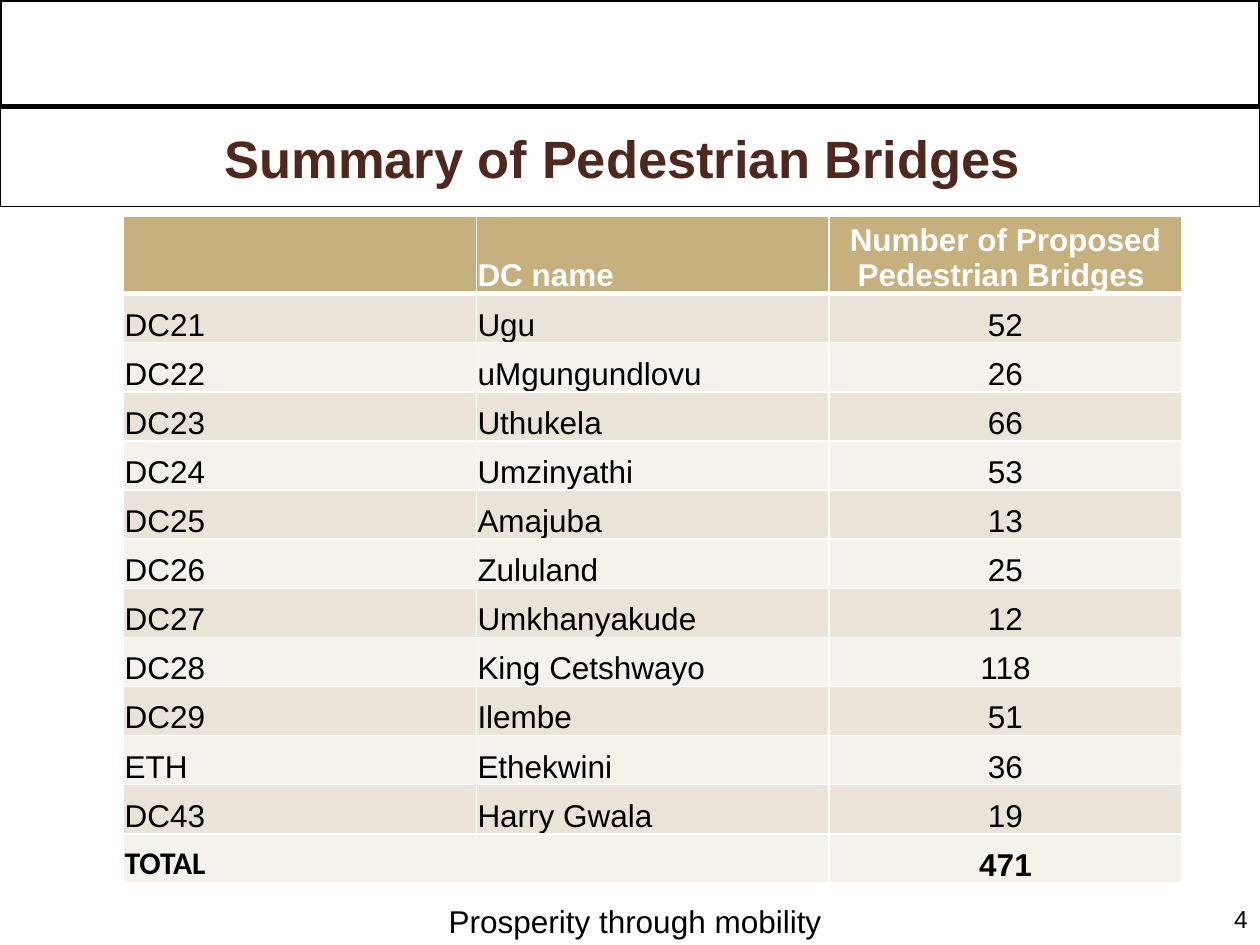
from pptx import Presentation
from pptx.dml.color import RGBColor
from pptx.enum.shapes import MSO_SHAPE
from pptx.enum.text import MSO_ANCHOR, PP_ALIGN
from pptx.oxml.ns import qn
from pptx.util import Inches, Pt
from lxml.etree import SubElement

BLACK, WHITE, BROWN = "000000", "FFFFFF", "4F271C"
HEADER_FILL, BAND_FILLS = "C5B07E", ("EAE4D8", "F5F2EC")

HEADINGS = ("", "DC name", "Number of Proposed Pedestrian Bridges ")
DISTRICTS = (
    ("DC21", "Ugu", 52),
    ("DC22", "uMgungundlovu", 26),
    ("DC23", "Uthukela", 66),
    ("DC24", "Umzinyathi", 53),
    ("DC25", "Amajuba", 13),
    ("DC26", "Zululand", 25),
    ("DC27", "Umkhanyakude", 12),
    ("DC28", "King Cetshwayo", 118),
    ("DC29", "Ilembe", 51),
    ("ETH", "Ethekwini", 36),
    ("DC43", "Harry Gwala", 19),
)


def rgb(color):
    return RGBColor.from_string(color)


def write(frame, text, size, color=BLACK, bold=False, align=PP_ALIGN.LEFT, font="Arial"):
    paragraph = frame.paragraphs[0]
    paragraph.text = text
    paragraph.alignment = align
    paragraph.font.name = font
    paragraph.font.size = Pt(size)
    paragraph.font.bold = bold
    paragraph.font.color.rgb = rgb(color)


def add_band(slide, top, height, line_width):
    """Add an outlined, unfilled band across the whole slide."""
    band = slide.shapes.add_shape(
        MSO_SHAPE.RECTANGLE, 0, Inches(top), Inches(10), Inches(height))
    band.shadow.inherit = False
    band.fill.background()
    band.line.color.rgb = rgb(BLACK)
    band.line.width = Pt(line_width)
    return band


def add_label(slide, left, top, width, height, text, size, align, anchor):
    label = slide.shapes.add_textbox(
        Inches(left), Inches(top), Inches(width), Inches(height))
    label.text_frame.word_wrap = True
    label.text_frame.vertical_anchor = anchor
    write(label.text_frame, text, size, align=align)


def add_border(cell, side, width):
    border = SubElement(cell._tc.get_or_add_tcPr(), qn(f"a:ln{side}"), w=str(Pt(width)))
    fill = SubElement(border, qn("a:solidFill"))
    SubElement(fill, qn("a:srgbClr"), val=WHITE)


def style_cell(cell, fill, top=1, bottom=1):
    cell.vertical_anchor = MSO_ANCHOR.BOTTOM
    cell.margin_left = cell.margin_right = cell.margin_top = Inches(0.01)
    cell.margin_bottom = 0
    for side, width in (("L", 1), ("R", 1), ("T", top), ("B", bottom)):
        add_border(cell, side, width)
    cell.fill.solid()
    cell.fill.fore_color.rgb = rgb(fill)


def add_bridge_table(slide):
    total = sum(count for _, _, count in DISTRICTS)
    rows = (HEADINGS, *DISTRICTS, ("TOTAL", "", total))
    last = len(rows) - 1
    table = slide.shapes.add_table(
        len(rows), 3, Inches(0.98), Inches(1.72), Inches(8.41), Inches(5.27)).table
    table.horz_banding = False
    for column in table.columns:
        column.width = Inches(2.8)
    for r, values in enumerate(rows):
        header = r == 0
        table.rows[r].height = Inches(0.6 if header else 0.39)
        for c, value in enumerate(values):
            cell = table.cell(r, c)
            style_cell(cell, HEADER_FILL if header else BAND_FILLS[(r - 1) % 2],
                       top=3 if r == 1 else 1, bottom=3 if header else 1)
            write(cell.text_frame, str(value), 18,
                  color=WHITE if header else BLACK,
                  bold=r in (0, last),
                  align=PP_ALIGN.CENTER if c == 2 else PP_ALIGN.LEFT,
                  font="Calibri" if r == last and c < 2 else "Arial")
    table.cell(last, 0).merge(table.cell(last, 1))


def main():
    presentation = Presentation()
    presentation.slide_width, presentation.slide_height = Inches(10), Inches(7.5)
    slide = presentation.slides.add_slide(presentation.slide_layouts[6])

    add_band(slide, 0, 0.84, 2)
    add_label(slide, 2.93, 7.11, 4.22, 0.4, "Prosperity through mobility", 18,
              PP_ALIGN.CENTER, MSO_ANCHOR.TOP)
    title = add_band(slide, 0.86, 0.78, 0.75)
    title.text_frame.vertical_anchor = MSO_ANCHOR.MIDDLE
    write(title.text_frame, "Summary of Pedestrian Bridges ", 30, BROWN, True,
          PP_ALIGN.CENTER)
    add_label(slide, 9.12, 7.11, 0.88, 0.36, "4", 14, PP_ALIGN.RIGHT, MSO_ANCHOR.MIDDLE)
    add_bridge_table(slide)

    presentation.save("out.pptx")


if __name__ == "__main__":
    main()
